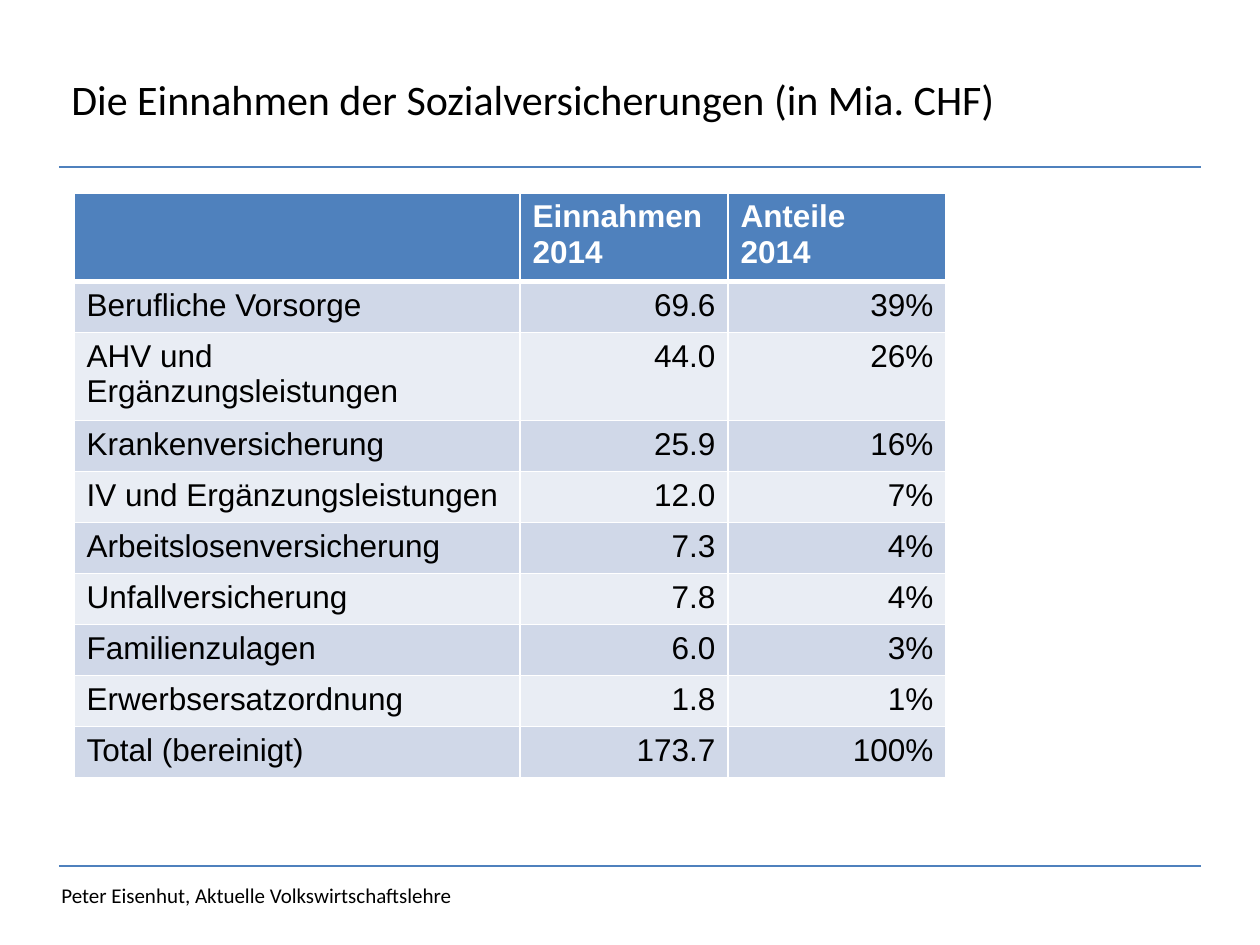
from dataclasses import dataclass

from lxml.etree import SubElement
from pptx import Presentation
from pptx.dml.color import RGBColor
from pptx.enum.shapes import MSO_CONNECTOR
from pptx.enum.text import MSO_ANCHOR as Anchor, PP_ALIGN as Align
from pptx.oxml import parse_xml
from pptx.oxml.ns import nsdecls, qn
from pptx.util import Emu, Pt

EMU_PER_PX = 914400 / 126
SLIDE_SIZE = (1260, 945)

COLUMN_WIDTHS = (446, 208, 218)
ROW_HEIGHT = 51
HEADER = ("", "Einnahmen 2014", "Anteile\n2014")
INCOME_ROWS = (
    ("Berufliche Vorsorge", "69.6", "39%"),
    ("AHV und Ergänzungsleistungen", "44.0", "26%"),
    ("Krankenversicherung", "25.9", "16%"),
    ("IV und Ergänzungsleistungen", "12.0", "7%"),
    ("Arbeitslosenversicherung", "7.3", "4%"),
    ("Unfallversicherung", "7.8", "4%"),
    ("Familienzulagen", "6.0", "3%"),
    ("Erwerbsersatzordnung", "1.8", "1%"),
    ("Total (bereinigt)", "173.7", "100%"),
)


@dataclass(frozen=True)
class Theme:
    accent: str = "4F81BD"
    bands: tuple = ("D0D8E8", "E9EDF4")
    white: str = "FFFFFF"
    black: str = "000000"
    text_font: str = "Calibri"
    table_font: str = "Arial"
    title_size: int = 24
    table_size: int = 18
    footer_size: int = 12
    rule_width: float = 1.25
    border_width: int = 1
    header_border_width: int = 3


def px(length):
    return Emu(round(length * EMU_PER_PX))


class SlideBuilder:
    def __init__(self, slide, theme):
        self.slide = slide
        self.theme = theme

    def add_runs(self, paragraph, text, font, size, color, bold=False):
        """Add one run per line of text, with line breaks between them."""
        for index, line in enumerate(text.split("\n")):
            if index:
                paragraph.add_line_break()
            run = paragraph.add_run()
            run.text = line
            run.font.name = font
            run.font.size = Pt(size)
            run.font.bold = bold
            run.font.color.rgb = RGBColor.from_string(color)

    def text(self, box, text, size, anchor=Anchor.TOP):
        shape = self.slide.shapes.add_textbox(*map(px, box))
        frame = shape.text_frame
        frame.word_wrap = True
        frame.vertical_anchor = anchor
        self.add_runs(frame.paragraphs[0], text, self.theme.text_font, size, self.theme.black)

    def rule(self, left, right, y):
        line = self.slide.shapes.add_connector(
            MSO_CONNECTOR.STRAIGHT, px(left), px(y), px(right), px(y))
        line.line.color.rgb = RGBColor.from_string(self.theme.accent)
        line.line.width = Pt(self.theme.rule_width)
        SubElement(line._element.spPr, qn("a:effectLst"))

    def borders(self, cell, top, bottom):
        """Draw white borders; they must precede the fill in the cell properties."""
        properties = cell._tc.get_or_add_tcPr()
        side = self.theme.border_width
        widths = {"lnL": side, "lnR": side, "lnT": top, "lnB": bottom}
        for index, (tag, width) in enumerate(widths.items()):
            properties.insert(index, parse_xml(
                f'<a:{tag} {nsdecls("a")} w="{Pt(width)}"><a:solidFill>'
                f'<a:srgbClr val="{self.theme.white}"/></a:solidFill></a:{tag}>'))

    def cell(self, cell, text, row, column):
        theme = self.theme
        is_header = row == 0
        cell.fill.solid()
        cell.fill.fore_color.rgb = RGBColor.from_string(
            theme.accent if is_header else theme.bands[(row - 1) % 2])
        self.borders(
            cell,
            top=theme.header_border_width if row == 1 else theme.border_width,
            bottom=theme.header_border_width if is_header else theme.border_width)
        paragraph = cell.text_frame.paragraphs[0]
        if not is_header and column:
            paragraph.alignment = Align.RIGHT
        if text:
            self.add_runs(paragraph, text, theme.table_font, theme.table_size,
                          theme.white if is_header else theme.black, bold=is_header)

    def table(self, left, top, rows, widths, row_height):
        table = self.slide.shapes.add_table(
            len(rows), len(widths), px(left), px(top),
            px(sum(widths)), px(row_height * len(rows))).table
        for column, width in zip(table.columns, widths):
            column.width = px(width)
        for row_index, values in enumerate(rows):
            table.rows[row_index].height = px(row_height)
            for column_index, value in enumerate(values):
                self.cell(table.cell(row_index, column_index), value, row_index, column_index)


def main():
    presentation = Presentation()
    presentation.slide_width, presentation.slide_height = map(px, SLIDE_SIZE)
    theme = Theme()
    builder = SlideBuilder(
        presentation.slides.add_slide(presentation.slide_layouts[6]), theme)

    for y in (167, 866):
        builder.rule(59, 1201, y)
    builder.text((49, 876, 758, 38), "Peter Eisenhut, Aktuelle Volkswirtschaftslehre",
                 theme.footer_size)
    builder.text((59, 20, 994, 158), "Die Einnahmen der Sozialversicherungen (in Mia. CHF)",
                 theme.title_size, Anchor.MIDDLE)
    builder.table(74, 193, (HEADER, *INCOME_ROWS), COLUMN_WIDTHS, ROW_HEIGHT)

    presentation.save("out.pptx")


if __name__ == "__main__":
    main()
